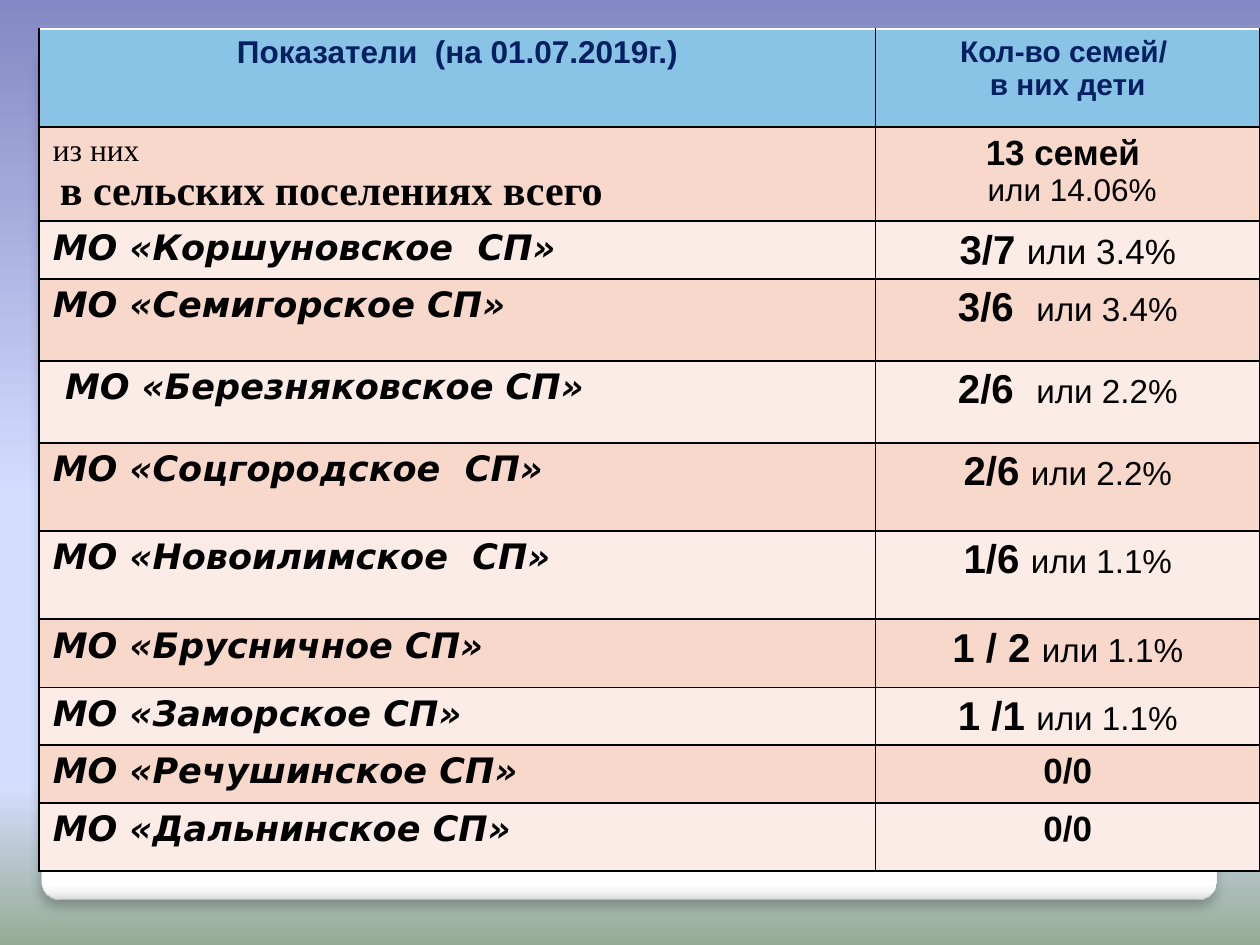
from lxml import etree
from pptx import Presentation
from pptx.dml.color import RGBColor
from pptx.enum.shapes import MSO_SHAPE
from pptx.enum.text import PP_ALIGN
from pptx.oxml.ns import qn
from pptx.util import Inches, Pt

CENTER = PP_ALIGN.CENTER
LEFT = PP_ALIGN.LEFT
ROUND = MSO_SHAPE.ROUNDED_RECTANGLE

SKY = [(0, "8488C4"), (53, "D4DEFF"), (83, "D4DEFF"), (100, "96AB94")]
PAPER = [(0, "FFFFFF"), (98, "FFFFFF"), (99, "F7F7F7"), (100, "DADADA")]
BLACK, WHITE, NAVY = "000000", "FFFFFF", "002060"
HEAD, BANDS = "89C3E5", ("F9D8CC", "FCECE7")

COLS = [6.64, 3.05]
ROWS = [0.78, 0.74, 0.45, 0.65, 0.65, 0.7, 0.7, 0.54, 0.43, 0.46, 0.54]
TOWNS = [
    ("МО «Коршуновское  СП»", "3/7 ", "или 3.4%", 20),
    ("МО «Семигорское СП»", "3/6  ", "или 3.4%", 19),
    (" МО «Березняковское СП»", "2/6  ", "или 2.2%", 19),
    ("МО «Соцгородское  СП»", "2/6 ", "или 2.2%", 19),
    ("МО «Новоилимское  СП»", "1/6 ", "или 1.1%", 19),
    ("МО «Брусничное СП»", "1 / 2 ", "или 1.1%", 19),
    ("МО «Заморское СП»", "1 /1 ", "или 1.1%", 19),
    ("МО «Речушинское СП»", "0/0", "", 0),
    ("МО «Дальнинское СП»", "0/0", "", 0),
]


def color(text):
    return RGBColor.from_string(text)


def shade(fill, root, stops):
    fill.gradient()
    fill.gradient_angle = 270
    items = root.find(".//" + qn("a:gsLst"))
    for item in list(items):
        items.remove(item)
    for pos, tint in stops:
        stop = etree.SubElement(items, qn("a:gs"), pos=str(pos * 1000))
        etree.SubElement(stop, qn("a:srgbClr"), val=tint)


def add_card(slide):
    card = slide.shapes.add_shape(
        ROUND, Inches(0.33), Inches(0.36), Inches(9.33), Inches(6.78))
    card.adjustments[0] = 0.021
    shade(card.fill, card.element, PAPER)
    card.line.color.rgb = color("A4A4A4")
    card.line.width = Pt(0.16)
    card.shadow.inherit = False
    glow = etree.SubElement(
        card.element.spPr.find(qn("a:effectLst")), qn("a:outerShdw"),
        blurRad=str(Pt(6)), dist=str(Pt(4)), dir="5400000", rotWithShape="0")
    tint = etree.SubElement(glow, qn("a:srgbClr"), val=BLACK)
    etree.SubElement(tint, qn("a:alpha"), val="25000")


def add_edges(cell, top):
    props = cell._tc.get_or_add_tcPr()
    sides = [("L", BLACK), ("R", BLACK), ("T", top), ("B", BLACK)]
    for spot, (side, tint) in enumerate(sides):
        line = etree.Element(qn("a:ln" + side), w=str(Pt(1)))
        fill = etree.SubElement(line, qn("a:solidFill"))
        etree.SubElement(fill, qn("a:srgbClr"), val=tint)
        props.insert(spot, line)


def style(font, size, bold):
    font.size = Pt(size)
    font.bold = bold


def write(cell, lines, face="Arial", tint=BLACK, align=CENTER, italic=False):
    frame = cell.text_frame
    for index, runs in enumerate(lines):
        para = frame.add_paragraph() if index else frame.paragraphs[0]
        para.alignment = align
        para.font.name = face
        para.font.color.rgb = color(tint)
        para.font.italic = italic
        if len(runs) == 1:
            style(para.font, *runs[0][1:])
        for text, size, bold in runs:
            run = para.add_run()
            run.text = text
            if len(runs) > 1:
                style(run.font, size, bold)


def add_grid(slide):
    frame = slide.shapes.add_table(
        len(ROWS), len(COLS), Inches(0.31), Inches(0.23),
        Inches(sum(COLS)), Inches(sum(ROWS)))
    table = frame.table
    table.first_row = False
    table.horz_banding = False
    for col, width in zip(table.columns, COLS):
        col.width = Inches(width)
    for index, (row, height) in enumerate(zip(table.rows, ROWS)):
        row.height = Inches(height)
        for cell in row.cells:
            cell.margin_left = cell.margin_right = Inches(0.11)
            cell.margin_top = cell.margin_bottom = Inches(0.05)
            cell.fill.solid()
            tint = BANDS[(index - 1) % 2] if index else HEAD
            cell.fill.fore_color.rgb = color(tint)
            add_edges(cell, BLACK if index else WHITE)
    return table


def fill_grid(table):
    write(table.cell(0, 0), [[("Показатели  (на 01.07.2019г.)", 18, True)]],
          tint=NAVY)
    write(table.cell(0, 1), [[("Кол-во семей/ ", 17, True)],
                             [("в них дети", 17, True)]], tint=NAVY)
    write(table.cell(1, 0), [
        [("из них", 18, False)],
        [(" ", 16, False), ("в сельских поселениях всего", 24, True)],
    ], face="Times New Roman", align=LEFT)
    write(table.cell(1, 1), [[("13 семей ", 20, True)],
                             [(" или 14.06%", 18, False)]])
    for row, (name, count, share, size) in enumerate(TOWNS, 2):
        write(table.cell(row, 0), [[(name, 20, True)]],
              face="DejaVu Sans", align=LEFT, italic=True)
        runs = [(count, 23, True), (share, size, False)]
        write(table.cell(row, 1), [runs if share else [(count, 20, True)]])


def main():
    deck = Presentation()
    deck.slide_width = Inches(10)
    deck.slide_height = Inches(7.5)
    slide = deck.slides.add_slide(deck.slide_layouts[6])
    shade(slide.background.fill, slide.element, SKY)
    add_card(slide)
    fill_grid(add_grid(slide))
    deck.save("out.pptx")


if __name__ == "__main__":
    main()
